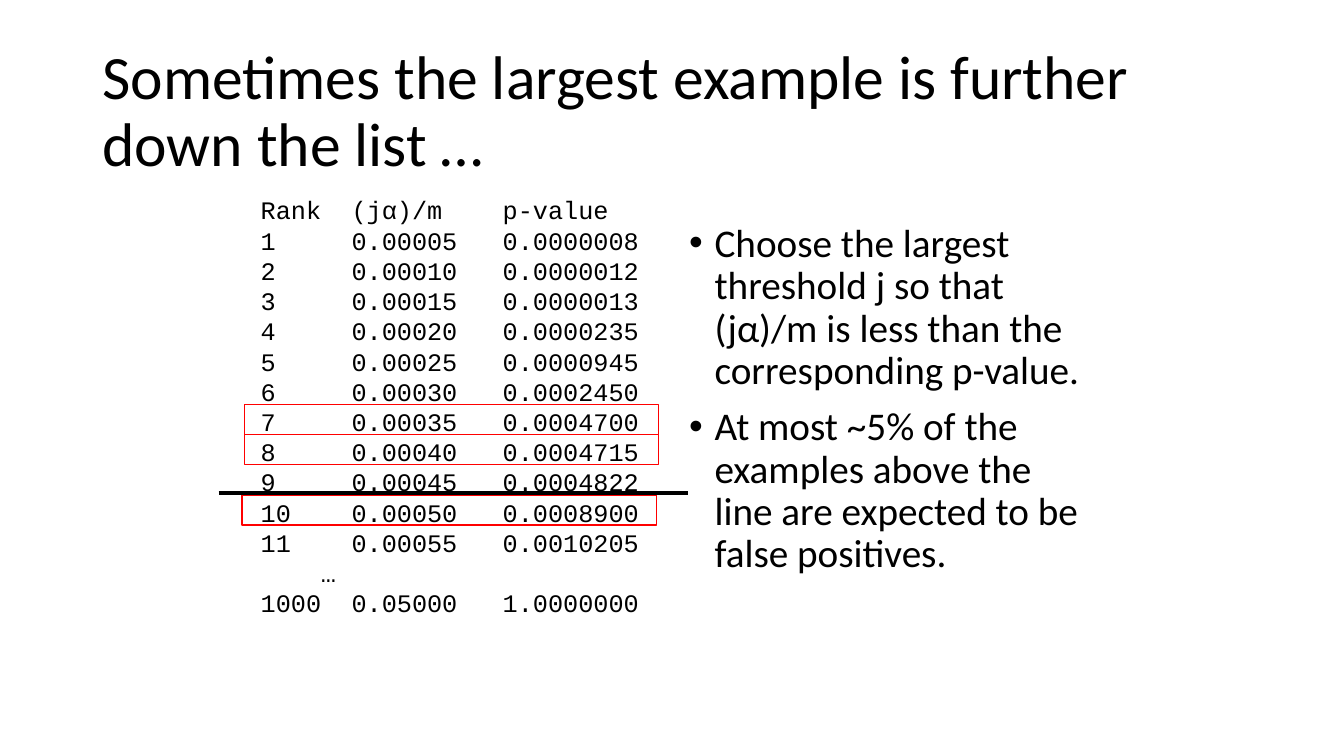
from lxml.etree import SubElement
from pptx import Presentation
from pptx.dml.color import RGBColor
from pptx.enum.shapes import MSO_CONNECTOR, MSO_SHAPE
from pptx.enum.text import MSO_ANCHOR
from pptx.oxml.ns import qn
from pptx.util import Cm, Pt

BLACK = RGBColor(0, 0, 0)
RED = RGBColor(255, 0, 0)

TITLE = "Sometimes the largest example is further down the list …"
HEAD = ("Rank", "(jα)/m", "p-value")
VALUES = (
    "0.0000008", "0.0000012", "0.0000013", "0.0000235", "0.0000945", "0.0002450",
    "0.0004700", "0.0004715", "0.0004822", "0.0008900", "0.0010205",
)
LAST = ("1000", "0.05000", "1.0000000")
POINTS = (
    "Choose the largest threshold j so that (jα)/m is less than the corresponding p-value.",
    "At most ~5% of the examples above the line are expected to be false positives.",
)
STOPS = (2.29, 6.1)
PITCH = 0.76


class Painter:
    sans = "Calibri"
    mono = "Courier New"

    def __init__(self, slide):
        self.shapes = slide.shapes

    def frame(self, left, top, width, height):
        box = self.shapes.add_textbox(Cm(left), Cm(top), Cm(width), Cm(height))
        box.text_frame.word_wrap = True
        return box.text_frame

    def lines(self, frame, texts):
        frame.text = "\n".join(texts)
        return frame.paragraphs

    def font(self, para, name, size):
        para.font.name = name
        para.font.size = Pt(size)
        para.font.color.rgb = BLACK

    def title(self, text, *place):
        frame = self.frame(*place)
        frame.vertical_anchor = MSO_ANCHOR.MIDDLE
        para = self.lines(frame, [text])[0]
        para.line_spacing = 0.9
        self.font(para, self.sans, 44)

    def listing(self, rows, *place):
        texts = ["\t".join(row) for row in rows]
        for para in self.lines(self.frame(*place), texts):
            props = para._p.get_or_add_pPr()
            if para.text == "…":
                props.set("marL", str(Cm(1.52)))
            else:
                tabs = SubElement(props, qn("a:tabLst"))
                for stop in STOPS:
                    SubElement(tabs, qn("a:tab"), pos=str(Cm(stop)), algn="l")
            self.font(para, self.mono, 18)

    def bullets(self, texts, *place):
        for index, para in enumerate(self.lines(self.frame(*place), texts)):
            props = para._p.get_or_add_pPr()
            props.set("marL", str(Cm(0.64)))
            props.set("indent", str(Cm(-0.64)))
            SubElement(props, qn("a:buFont"), typeface="Arial")
            SubElement(props, qn("a:buChar"), char="•")
            para.line_spacing = 0.9
            if index:
                para.space_before = Pt(10)
            self.font(para, self.sans, 28)

    def outline(self, left, top, width, height):
        box = self.shapes.add_shape(
            MSO_SHAPE.RECTANGLE, Cm(left), Cm(top), Cm(width), Cm(height)
        )
        box.shadow.inherit = False
        box.fill.background()
        box.line.color.rgb = RED
        box.line.width = Pt(1)

    def rule(self, left, right, top):
        line = self.shapes.add_connector(
            MSO_CONNECTOR.STRAIGHT, Cm(left), Cm(top), Cm(right), Cm(top)
        )
        line.line.color.rgb = BLACK
        line.line.width = Pt(3)
        SubElement(line._element.spPr, qn("a:effectLst"))


def main():
    deck = Presentation()
    deck.slide_width = Cm(33.87)
    deck.slide_height = Cm(19.05)
    draw = Painter(deck.slides.add_slide(deck.slide_layouts[6]))

    ranks = [
        (str(rank), f"{rank * 0.00005:.5f}", value)
        for rank, value in enumerate(VALUES, 1)
    ]
    draw.title(TITLE, 2.33, 1.01, 29.21, 3.68)
    draw.listing([HEAD, *ranks, ("…",), LAST], 6.32, 4.78, 10.1, 11.02)
    draw.bullets(POINTS, 17.12, 5.51, 10.59, 11.43)
    for rank, left in ((7, 6.16), (8, 6.16), (10, 6.1)):
        draw.outline(left, 10.19 + (rank - 7) * PITCH, 10.44, PITCH)
    draw.rule(5.51, 17.35, 12.42)
    deck.save("out.pptx")


if __name__ == "__main__":
    main()
